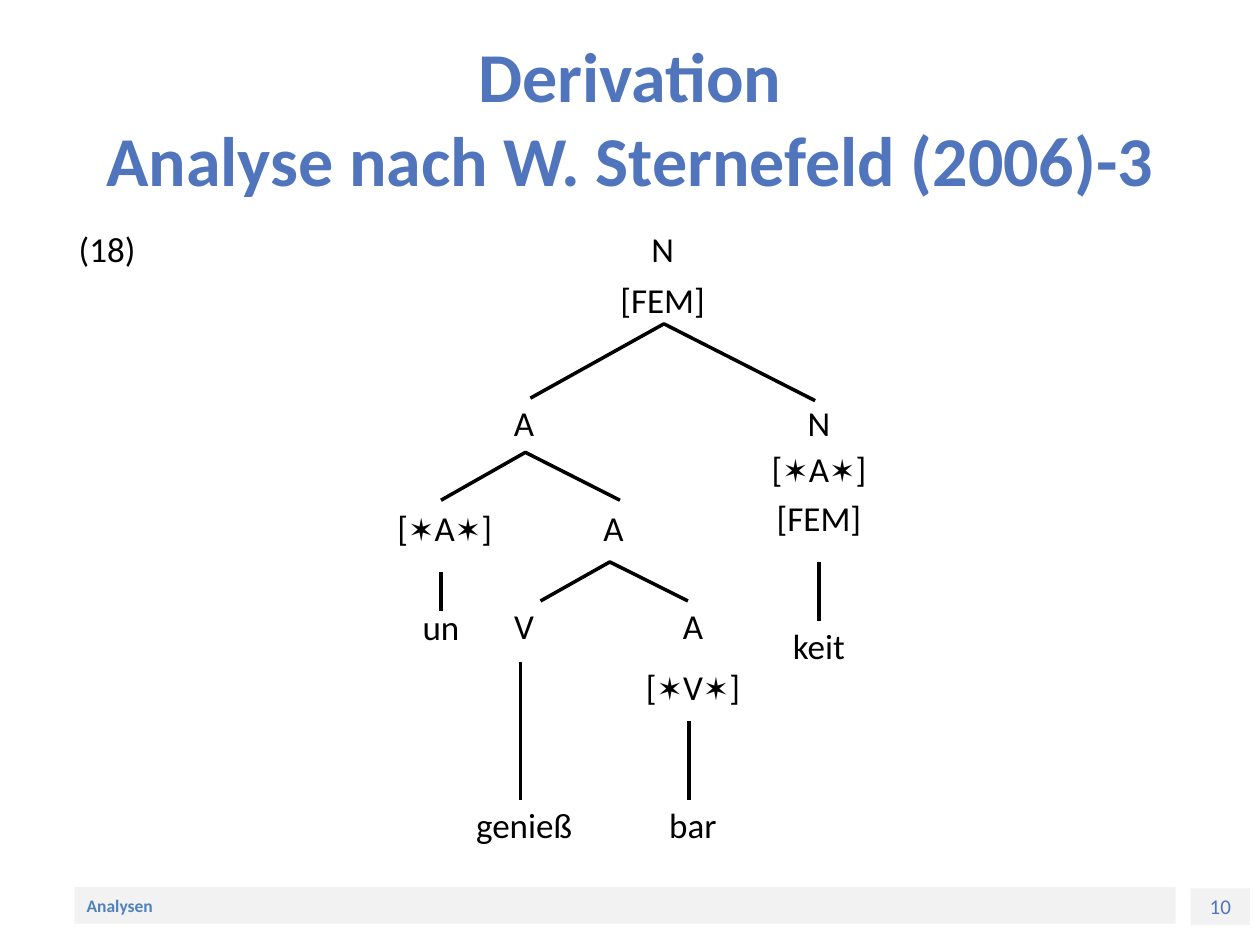
from typing import NamedTuple

from lxml.etree import SubElement
from pptx import Presentation
from pptx.dml.color import RGBColor
from pptx.enum.shapes import MSO_CONNECTOR, MSO_SHAPE
from pptx.enum.text import MSO_ANCHOR, PP_ALIGN
from pptx.oxml.ns import qn
from pptx.util import Inches, Pt

FONT = "Calibri"
BLACK, BLUE, FOOTER_BLUE, GREY = "000000", "5075BC", "4F81BD", "F2F2F2"
STAR = "✶"
LINE_WIDTH = Pt(2)


class Node(NamedTuple):
    text: str
    left: float
    top: float
    width: float = 1
    height: float = 0.55


class Stem(NamedTuple):
    x: float
    top: float
    bottom: float


class Branch(NamedTuple):
    left: tuple[float, float]
    apex: tuple[float, float]
    right: tuple[float, float]


class FooterBox(NamedTuple):
    text: str
    left: float
    top: float
    width: float
    size: int
    color: str
    bold: bool
    alignment: PP_ALIGN


NODES = [
    Node("(18)", 0.35, 1.7),
    Node("N", 4.76, 1.7),
    Node("[FEM]", 4.76, 2.1),
    Node("A", 3.66, 3.04, height=0.63),
    Node("N", 5.87, 3.04, 1.26, 0.63),
    Node("[✶A✶]", 5.87, 3.44, 1.26),
    Node("[FEM]", 5.87, 3.83, 1.26),
    Node("keit", 5.87, 4.85, 1.26),
    Node("[✶A✶]", 3.03, 3.91),
    Node("un", 2.95, 4.62, 1.1, 0.71),
    Node("A", 4.37, 3.91),
    Node("V", 3.66, 4.69),
    Node("genieß", 3.66, 6.27),
    Node("A", 5, 4.69),
    Node("[✶V✶]", 5, 5.17),
    Node("bar", 5, 6.27),
]
STEMS = [
    Stem(4.13, 5.25, 6.35),
    Stem(5.47, 5.72, 6.35),
    Stem(3.5, 4.54, 4.85),
    Stem(6.5, 4.46, 4.93),
]
BRANCHES = [
    Branch((4.21, 3.16), (5.27, 2.57), (6.47, 3.18)),
    Branch((3.5, 3.97), (4.17, 3.59), (4.92, 3.97)),
    Branch((4.29, 4.77), (4.84, 4.46), (5.46, 4.77)),
]
FOOTER = [
    FooterBox("Analysen", 0.59, 7.04, 8.74, 10, FOOTER_BLUE, True, PP_ALIGN.LEFT),
    FooterBox("10", 9.45, 7.05, 0.47, 12, BLUE, False, PP_ALIGN.CENTER),
]


def rgb(color: str) -> RGBColor:
    return RGBColor.from_string(color)


def add_run(paragraph, text: str, size: int, color: str, bold: bool = False) -> None:
    run = paragraph.add_run()
    run.text = text
    run.font.name = FONT
    run.font.size = Pt(size)
    run.font.bold = bold
    run.font.color.rgb = rgb(color)


def prepare_text(shape, alignment: PP_ALIGN, wrap: bool = True):
    frame = shape.text_frame
    frame.word_wrap = wrap
    frame.vertical_anchor = MSO_ANCHOR.MIDDLE
    paragraph = frame.paragraphs[0]
    paragraph.alignment = alignment
    return paragraph


def add_title(slide, lines: list[str]) -> None:
    shape = slide.shapes.add_textbox(Inches(0.5), Inches(0.3), Inches(9), Inches(1.25))
    paragraph = prepare_text(shape, PP_ALIGN.CENTER)
    for index, line in enumerate(lines):
        if index:
            paragraph.add_line_break()
        add_run(paragraph, line, 40, BLUE, bold=True)


def add_footer_box(slide, box: FooterBox) -> None:
    shape = slide.shapes.add_shape(
        MSO_SHAPE.RECTANGLE,
        Inches(box.left), Inches(box.top), Inches(box.width), Inches(0.29))
    shape.shadow.inherit = False
    shape.fill.solid()
    shape.fill.fore_color.rgb = rgb(GREY)
    shape.line.fill.background()
    paragraph = prepare_text(shape, box.alignment)
    add_run(paragraph, box.text, box.size, box.color, box.bold)


def add_node(slide, node: Node) -> None:
    shape = slide.shapes.add_textbox(
        Inches(node.left), Inches(node.top), Inches(node.width), Inches(node.height))
    paragraph = prepare_text(shape, PP_ALIGN.CENTER, wrap=False)
    # Stars are set slightly smaller than the text around them
    pieces = node.text.replace(STAR, f"|{STAR}|").split("|")
    for piece in pieces:
        add_run(paragraph, piece, 18 if piece == STAR else 20, BLACK)


def style_line(line) -> None:
    line.color.rgb = rgb(BLACK)
    line.width = LINE_WIDTH


def add_stem(slide, stem: Stem) -> None:
    connector = slide.shapes.add_connector(
        MSO_CONNECTOR.STRAIGHT,
        Inches(stem.x), Inches(stem.top), Inches(stem.x), Inches(stem.bottom))
    style_line(connector.line)
    SubElement(connector._element.spPr, qn("a:effectLst"))


def add_branch(slide, branch: Branch) -> None:
    start, *rest = [(Inches(x), Inches(y)) for x, y in branch]
    builder = slide.shapes.build_freeform(*start)
    builder.add_line_segments(rest, close=False)
    shape = builder.convert_to_shape()
    shape.shadow.inherit = False
    shape.fill.background()
    style_line(shape.line)


def main() -> None:
    presentation = Presentation()
    presentation.slide_width = Inches(10)
    presentation.slide_height = Inches(7.5)
    slide = presentation.slides.add_slide(presentation.slide_layouts[6])

    # Footer and title
    for box in FOOTER:
        add_footer_box(slide, box)
    add_title(slide, ["Derivation", "Analyse nach W. Sternefeld (2006)-3"])

    # Syntax tree
    for node in NODES:
        add_node(slide, node)
    for stem in STEMS:
        add_stem(slide, stem)
    for branch in BRANCHES:
        add_branch(slide, branch)

    presentation.save("out.pptx")


if __name__ == "__main__":
    main()
